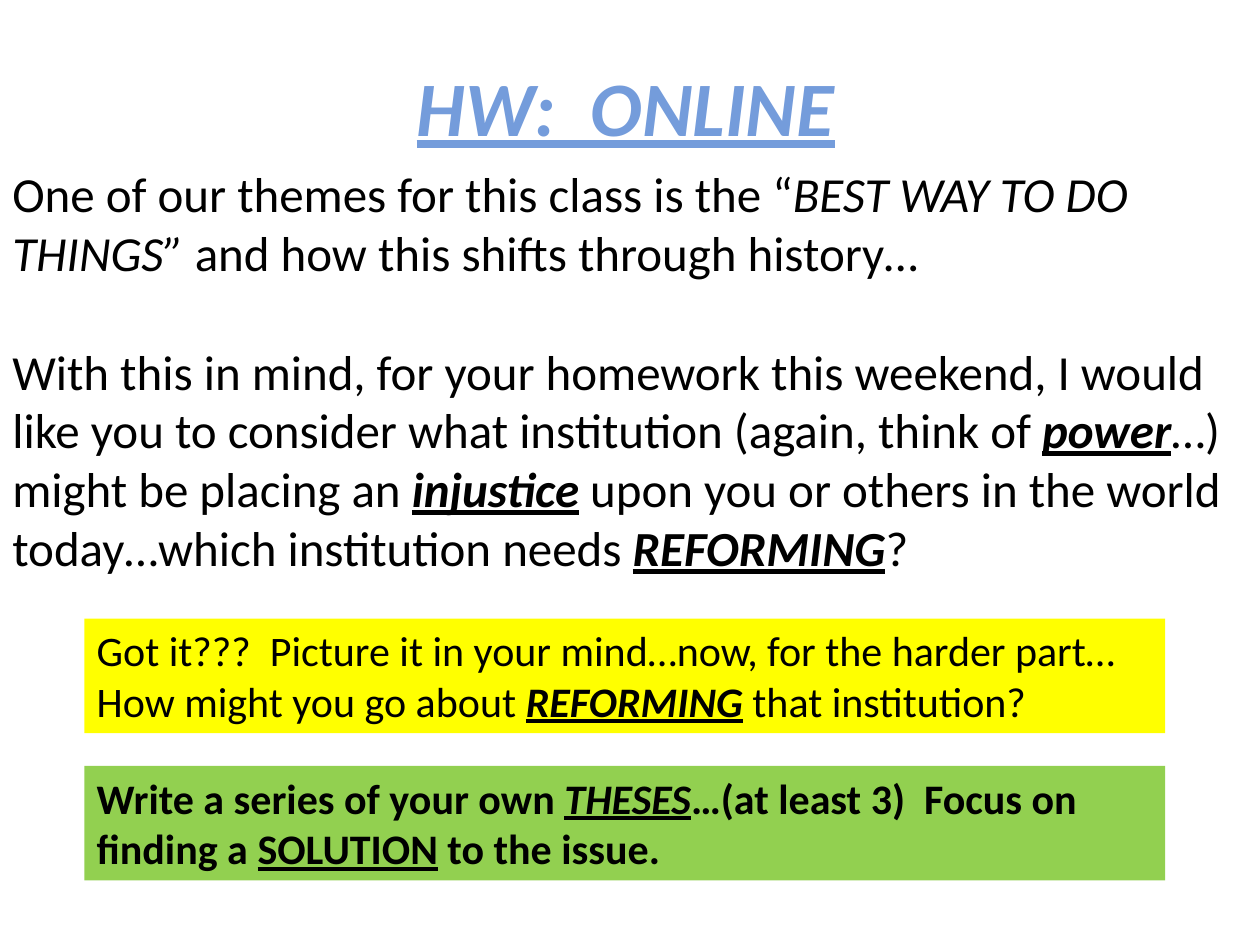
import pptx
import pptx.dml.color
import pptx.enum.shapes
import pptx.enum.text
import pptx.util

Cm = pptx.util.Cm
Pt = pptx.util.Pt
RGBColor = pptx.dml.color.RGBColor

BLACK = RGBColor(0x00, 0x00, 0x00)
BLUE = RGBColor(0x74, 0x9C, 0xDB)
YELLOW = RGBColor(0xFF, 0xFF, 0x00)
GREEN = RGBColor(0x92, 0xD0, 0x50)

TITLE = [("HW:  ONLINE", "biu")]
THEME = [
    ("One of our themes for this class is the “", ""),
    ("BEST WAY TO DO THINGS” ", "i"),
    ("and how this shifts through history…", ""),
]
TASK = [
    ("With this in mind, for your homework this weekend, I would like you to "
     "consider what institution (again, think of ", ""),
    ("power", "biu"),
    ("…) might be placing an ", ""),
    ("injustice", "biu"),
    (" upon you or others in the world today…which institution needs ", ""),
    ("REFORMING", "biu"),
    ("?", ""),
]
QUESTION = [
    ("Got it???  Picture it in your mind…now, for the harder part…"
     "How might you go about ", ""),
    ("REFORMING", "biu"),
    (" ", "bi"),
    ("that institution?", ""),
]
THESES = [
    ("Write a series of your own ", "b"),
    ("THESES", "biu"),
    ("…(at least 3)  Focus on finding a ", "b"),
    ("SOLUTION", "bu"),
    (" to the issue.", "b"),
]


def write_spans(para, spans, size, color=BLACK):
    """Fill a paragraph with spans styled by the letters b, i and u."""
    for text, style in spans:
        span = para.add_run()
        span.text = text
        span.font.name = "Calibri"
        span.font.size = Pt(size)
        span.font.color.rgb = color
        span.font.bold = "b" in style
        span.font.italic = "i" in style
        span.font.underline = "u" in style


def add_title(page, left, top, width, height):
    """Place the centred heading, shifted right by its left margin."""
    frame = page.shapes.add_textbox(left, top, width, height).text_frame
    frame.word_wrap = True
    frame.margin_left = Cm(1.6)
    frame.vertical_anchor = pptx.enum.text.MSO_ANCHOR.MIDDLE
    para = frame.paragraphs[0]
    para.alignment = pptx.enum.text.PP_ALIGN.CENTER
    write_spans(para, TITLE, 44, BLUE)


def add_body(page, left, top, width, height):
    """Place the two body paragraphs one line apart."""
    frame = page.shapes.add_textbox(left, top, width, height).text_frame
    frame.word_wrap = True
    write_spans(frame.paragraphs[0], THEME, 28)
    para = frame.add_paragraph()
    para.space_before = Pt(34)
    write_spans(para, TASK, 28)


def add_callout(page, left, top, width, height, fill, spans):
    """Place a filled box with left-aligned text."""
    box = page.shapes.add_shape(
        pptx.enum.shapes.MSO_SHAPE.RECTANGLE, left, top, width, height)
    box.shadow.inherit = False
    box.fill.solid()
    box.fill.fore_color.rgb = fill
    box.line.fill.background()
    frame = box.text_frame
    frame.word_wrap = True
    frame.vertical_anchor = pptx.enum.text.MSO_ANCHOR.TOP
    para = frame.paragraphs[0]
    para.alignment = pptx.enum.text.PP_ALIGN.LEFT
    write_spans(para, spans, 24)


def main():
    """Build the homework slide."""
    deck = pptx.Presentation()
    deck.slide_width = Cm(25.4)
    deck.slide_height = Cm(19.05)
    page = deck.slides.add_slide(deck.slide_layouts[6])
    add_title(page, Cm(0), Cm(0.64), Cm(23.88), Cm(2.97))
    add_body(page, Cm(0), Cm(3.18), Cm(25.4), Cm(8.64))
    callouts = [(12.47, YELLOW, QUESTION), (15.44, GREEN, THESES)]
    for top, fill, spans in callouts:
        add_callout(page, Cm(1.7), Cm(top), Cm(21.79), Cm(2.31), fill, spans)
    deck.save("out.pptx")


if __name__ == "__main__":
    main()
